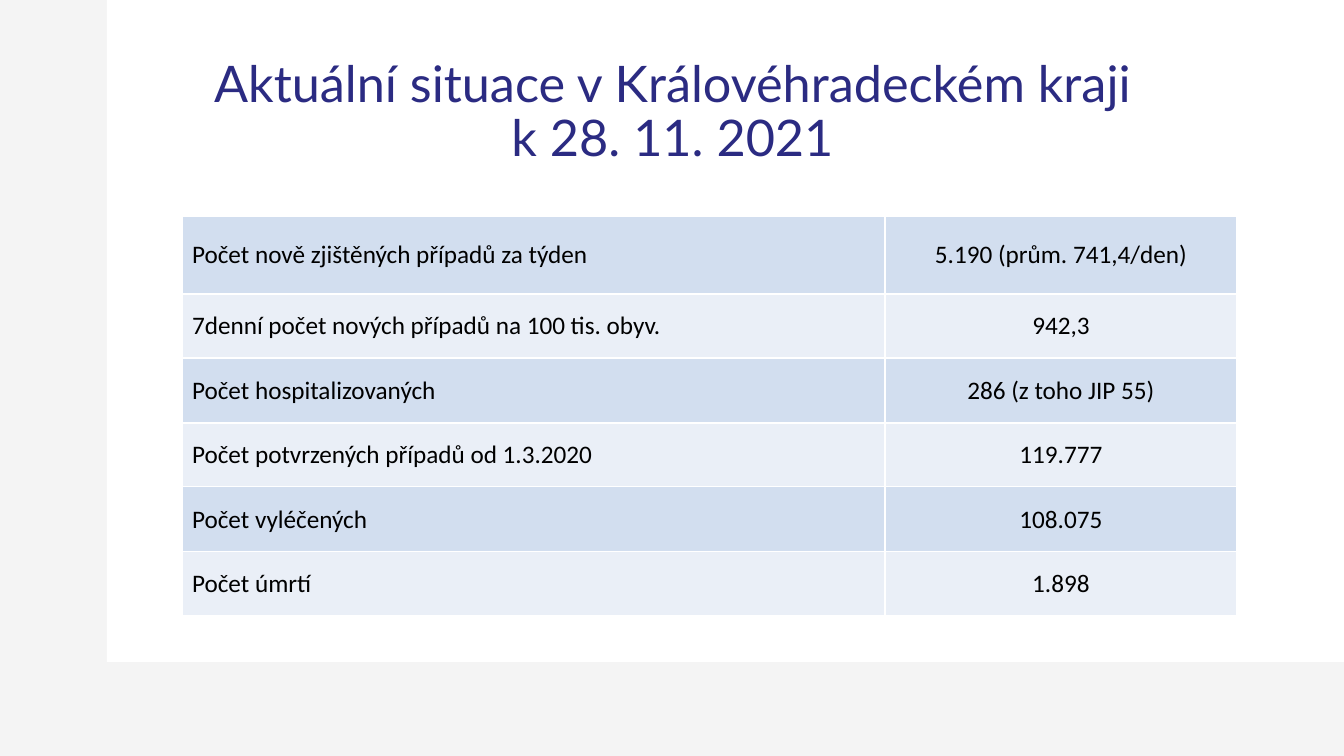
"""Build the slide with the weekly regional case figures."""
from lxml.etree import SubElement
from pptx import Presentation
from pptx.dml.color import RGBColor
from pptx.enum.shapes import MSO_SHAPE
from pptx.enum.text import MSO_ANCHOR, PP_ALIGN
from pptx.oxml.ns import qn
from pptx.util import Emu, Pt

GREY = RGBColor(0xF4, 0xF4, 0xF4)
WHITE = RGBColor(0xFF, 0xFF, 0xFF)
BLACK = RGBColor(0x00, 0x00, 0x00)
NAVY = RGBColor(0x2B, 0x2B, 0x82)
BANDS = [RGBColor(0xD2, 0xDE, 0xEF), RGBColor(0xEA, 0xEF, 0xF7)]

TITLE = ["Aktuální situace v Královéhradeckém kraji", "k 28. 11. 2021"]
FIGURES = [
    ("Počet nově zjištěných případů za týden", "5.190 (prům. 741,4/den)"),
    ("7denní počet nových případů na 100 tis. obyv.", "942,3"),
    ("Počet hospitalizovaných", "286 (z toho JIP 55)"),
    ("Počet potvrzených případů od 1.3.2020", "119.777"),
    ("Počet vyléčených", "108.075"),
    ("Počet úmrtí", "1.898"),
]
COL_WIDTHS = [703, 352]
ROW_HEIGHTS = [78, 64, 65, 64, 65, 64]
ALIGNS = [PP_ALIGN.LEFT, PP_ALIGN.CENTER]
TITLE_FONT = {"name": "Lato", "size": Pt(36), "bold": False}
CELL_FONT = {"name": "Calibri", "size": Pt(18), "bold": False}


def px(n):
    return Emu(round(n * 914400 / 100.8))


def set_font(r, values, color):
    for key, value in values.items():
        setattr(r.font, key, value)
    r.font.color.rgb = color


prs = Presentation()
prs.slide_width, prs.slide_height = px(1344), px(756)
s = prs.slides.add_slide(prs.slide_layouts[5])
s.background.fill.solid()
s.background.fill.fore_color.rgb = GREY

title = s.shapes.title
title.left, title.top, title.width, title.height = map(px, (93, 40, 1159, 146))
tf = title.text_frame
tf.word_wrap = True
tf.vertical_anchor = MSO_ANCHOR.MIDDLE
p = tf.paragraphs[0]
p.alignment = PP_ALIGN.CENTER
p.line_spacing = 0.9
for i, line in enumerate(TITLE):
    if i:
        p.add_line_break()
    r = p.add_run()
    r.text = line
    set_font(r, TITLE_FONT, NAVY)

panel = s.shapes.add_shape(MSO_SHAPE.RECTANGLE, *map(px, (107, 0, 1237, 662)))
panel.shadow.inherit = False
panel.fill.solid()
panel.fill.fore_color.rgb = WHITE
panel.line.fill.background()
title.element.addprevious(panel.element)

table = s.shapes.add_table(len(FIGURES), len(COL_WIDTHS), px(182), px(216),
                           px(sum(COL_WIDTHS)), px(sum(ROW_HEIGHTS))).table
table.first_row = False
for col, width in zip(table.columns, COL_WIDTHS):
    col.width = px(width)
for i, (row, height, texts) in enumerate(zip(table.rows, ROW_HEIGHTS, FIGURES)):
    row.height = px(height)
    for cell, text, align in zip(row.cells, texts, ALIGNS):
        cell.vertical_anchor = MSO_ANCHOR.MIDDLE
        tcPr = cell._tc.get_or_add_tcPr()
        for side in ("a:lnL", "a:lnR", "a:lnT", "a:lnB"):
            ln = SubElement(tcPr, qn(side), w=str(Pt(1)))
            fill = SubElement(ln, qn("a:solidFill"))
            SubElement(fill, qn("a:srgbClr"), val=str(WHITE))
        cell.fill.solid()
        cell.fill.fore_color.rgb = BANDS[i % 2]
        p = cell.text_frame.paragraphs[0]
        p.alignment = align
        r = p.add_run()
        r.text = text
        set_font(r, CELL_FONT, BLACK)

prs.save("out.pptx")
